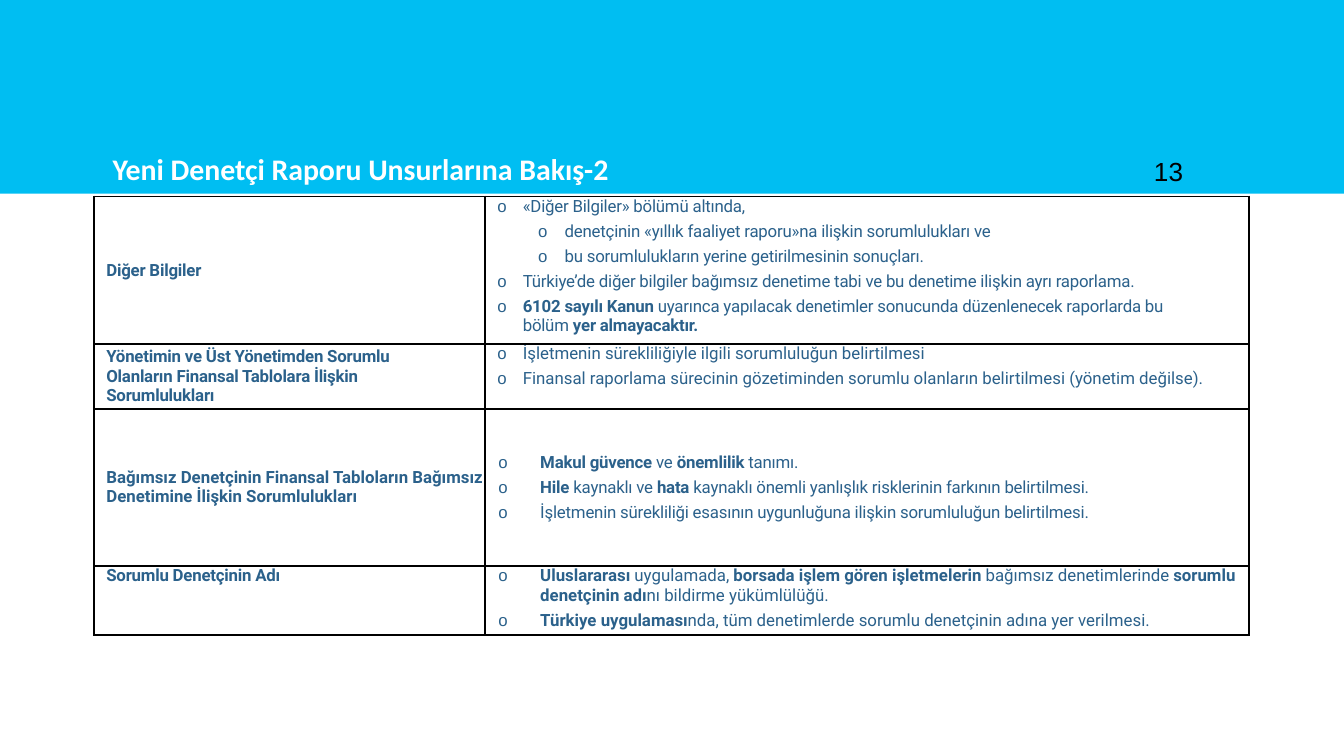
from pptx import Presentation, util as u
from pptx.dml.color import RGBColor
from pptx.enum import shapes, text
from pptx.oxml import parse_xml
from pptx.oxml.ns import nsdecls

TOP, MIDDLE, BOTTOM = (text.MSO_ANCHOR.TOP, text.MSO_ANCHOR.MIDDLE,
                       text.MSO_ANCHOR.BOTTOM)

# Left margin and first-line indent in cm
LABEL, ITEM, SUBITEM, WIDE = (0.23, 0), (0.71, -0.48), (1.5, -0.5), (1.04, -0.79)


def colour(code):
    return RGBColor.from_string(code)


class Page:
    band, ink, rule = "00BEF2", "2B618B", "000000"
    body_font, body_size = "Roboto", 9

    def __init__(self, deck):
        self.page = deck.slides.add_slide(deck.slide_layouts[6])

    def rectangle(self, left, top, width, height, fill):
        shape = self.page.shapes.add_shape(
            shapes.MSO_SHAPE.RECTANGLE, *map(u.Cm, (left, top, width, height)))
        shape.shadow.inherit = False
        shape.fill.solid()
        shape.fill.fore_color.rgb = colour(fill)
        shape.line.fill.background()

    def label(self, left, top, width, height, words, font, size, ink,
              bold=False, anchor=TOP):
        box = self.page.shapes.add_textbox(
            *map(u.Cm, (left, top, width, height)))
        frame = box.text_frame
        frame.word_wrap = True
        frame.vertical_anchor = anchor
        frame.text = words
        self.style(frame.paragraphs[0].runs[0], font, size, ink, bold)

    def style(self, span, font, size, ink, bold):
        span.font.name = font
        span.font.size = u.Pt(size)
        span.font.bold = bold
        span.font.color.rgb = colour(ink)

    def table(self, left, top, widths, heights, rows):
        grid = self.page.shapes.add_table(
            len(heights), len(widths), u.Cm(left), u.Cm(top),
            u.Cm(sum(widths)), u.Cm(sum(heights))).table
        grid.first_row = grid.horz_banding = False
        for column, width in zip(grid.columns, widths):
            column.width = u.Cm(width)
        for row, height, contents in zip(grid.rows, heights, rows):
            row.height = u.Cm(height)
            for cell, content in zip(row.cells, contents):
                self.cell(cell, **content)

    def cell(self, cell, lines, anchor=TOP, tracking=0, right=0):
        cell.margin_left = cell.margin_right = 0
        cell.margin_top = cell.margin_bottom = 0
        cell.vertical_anchor = anchor
        self.borders(cell)
        cell.fill.background()
        for number, (indent, words) in enumerate(lines):
            frame = cell.text_frame
            para = frame.add_paragraph() if number else frame.paragraphs[0]
            self.indent(para, indent, right)
            if number:
                para.space_before = u.Pt(2.8)
            # Every second part between ** marks is bold
            for place, part in enumerate(words.split("**")):
                if part:
                    span = para.add_run()
                    span.text = part
                    self.style(span, self.body_font, self.body_size,
                               self.ink, place % 2 == 1)
                    span.font._element.set("spc", str(tracking))

    def indent(self, para, indent, right):
        props = para._p.get_or_add_pPr()
        for name, value in zip(("marL", "indent", "marR"), (*indent, right)):
            props.set(name, str(u.Cm(value)))
        if indent != LABEL:
            props.append(parse_xml(f'<a:buFont {nsdecls("a")} typeface="Arial"/>'))
            props.append(parse_xml(f'<a:buChar {nsdecls("a")} char="o"/>'))

    def borders(self, cell):
        props = cell._tc.get_or_add_tcPr()
        for side in "LRTB":
            props.append(parse_xml(
                f'<a:ln{side} {nsdecls("a")} w="{u.Pt(1)}"><a:solidFill>'
                f'<a:srgbClr val="{self.rule}"/></a:solidFill></a:ln{side}>'))


def main():
    deck = Presentation()
    deck.slide_width, deck.slide_height = u.Cm(25.4), u.Cm(14.28)
    page = Page(deck)

    # Header band, page number and title
    page.rectangle(0, 0, 25.4, 3.66, page.band)
    page.label(21.56, 1.8, 1.53, 1.86, "13", "Arial", 14, "000000",
               anchor=BOTTOM)
    page.label(1.88, 2.72, 10.8, 0.94, "Yeni Denetçi Raporu Unsurlarına Bakış-2",
               "Calibri", 16, "FFFFFF", bold=True)

    # Report elements: label on the left, points on the right
    rows = [
        (dict(anchor=MIDDLE, tracking=-10, lines=[(LABEL, "**Diğer Bilgiler**")]),
         dict(tracking=-10, right=0.9, lines=[
             (ITEM, "«Diğer Bilgiler» bölümü altında,"),
             (SUBITEM, "denetçinin «yıllık faaliyet raporu»na ilişkin "
                       "sorumlulukları ve"),
             (SUBITEM, "bu sorumlulukların yerine getirilmesinin sonuçları."),
             (ITEM, "Türkiye’de diğer bilgiler bağımsız denetime tabi ve bu "
                    "denetime ilişkin ayrı raporlama."),
             (ITEM, "**6102 sayılı Kanun **uyarınca yapılacak denetimler "
                    "sonucunda düzenlenecek raporlarda bu bölüm "
                    "**yer almayacaktır.**")])),
        (dict(anchor=MIDDLE, tracking=-10, right=0.8, lines=[
            (LABEL, "**Yönetimin ve Üst Yönetimden Sorumlu Olanların Finansal "
                    "Tablolara İlişkin Sorumlulukları**")]),
         dict(lines=[
             (ITEM, "İşletmenin sürekliliğiyle ilgili sorumluluğun belirtilmesi"),
             (ITEM, "Finansal raporlama sürecinin gözetiminden sorumlu olanların "
                    "belirtilmesi (yönetim değilse).")])),
        (dict(anchor=MIDDLE, lines=[
            (LABEL, "**Bağımsız Denetçinin Finansal Tabloların Bağımsız "
                    "Denetimine İlişkin Sorumlulukları**")]),
         dict(anchor=MIDDLE, tracking=-10, lines=[
             (WIDE, "**Makul güvence **ve **önemlilik** tanımı."),
             (WIDE, "**Hile** kaynaklı ve **hata** kaynaklı önemli yanlışlık "
                    "risklerinin farkının belirtilmesi."),
             (WIDE, "İşletmenin sürekliliği esasının uygunluğuna ilişkin "
                    "sorumluluğun belirtilmesi.")])),
        (dict(tracking=-10, lines=[(LABEL, "**Sorumlu Denetçinin Adı**")]),
         dict(lines=[
             (WIDE, "**Uluslararası** uygulamada, **borsada işlem gören "
                    "işletmelerin** bağımsız denetimlerinde **sorumlu "
                    "denetçinin adı**nı bildirme yükümlülüğü."),
             (WIDE, "**Türkiye uygulaması**nda, tüm denetimlerde sorumlu "
                    "denetçinin adına yer verilmesi.")])),
    ]
    page.table(1.78, 3.71, (7.39, 14.43), (2.79, 1.22, 2.97, 1.3), rows)

    deck.save("out.pptx")


if __name__ == "__main__":
    main()
